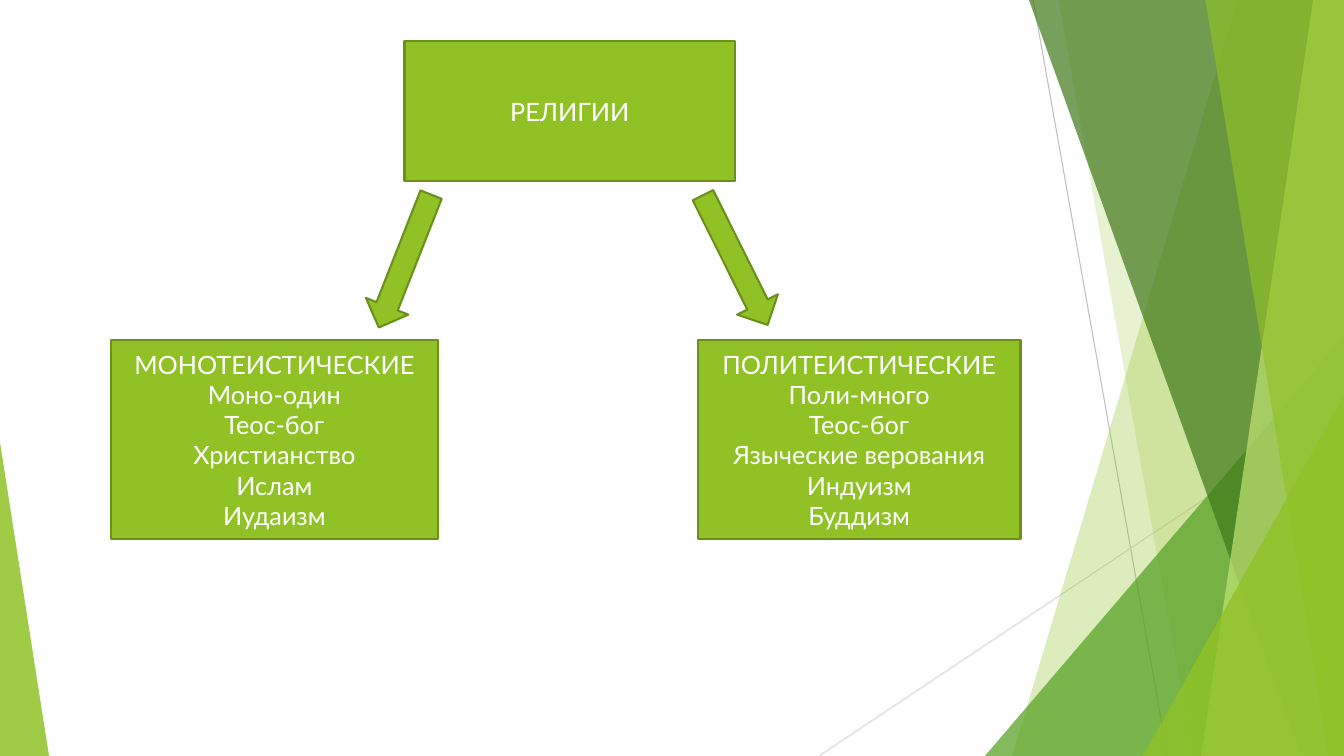
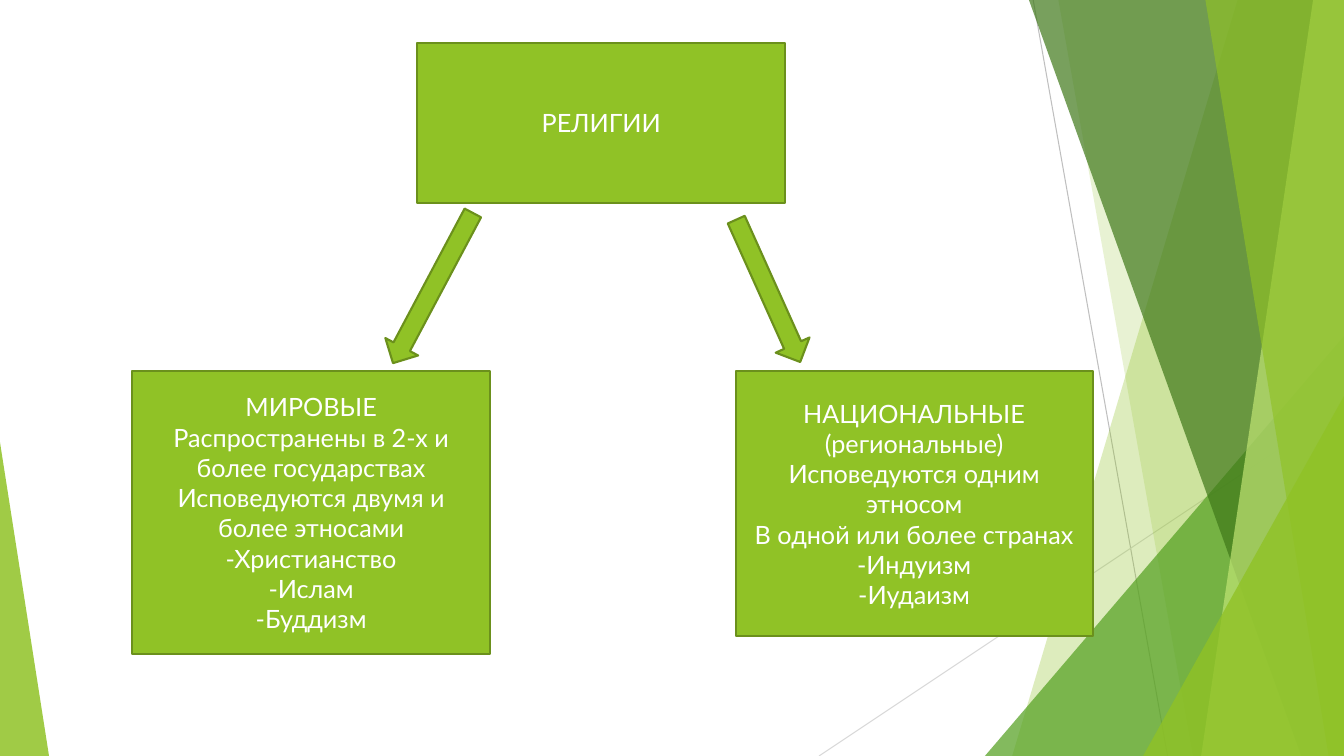
from dataclasses import dataclass

from pptx import Presentation
from pptx.dml.color import RGBColor
from pptx.enum.shapes import MSO_CONNECTOR as Connector, MSO_SHAPE as Shape
from pptx.enum.text import MSO_ANCHOR as Anchor, PP_ALIGN as Align
from pptx.oxml.ns import qn
from pptx.util import Pt
from lxml.etree import SubElement


@dataclass(frozen=True)
class Theme:
    lime: str = "90C226"
    outline: str = "6B901C"
    leaf: str = "54A021"
    forest: str = "3F7819"
    pale: str = "C0E474"
    white: str = "FFFFFF"
    ray_dark: str = "BFBFBF"
    ray_light: str = "D9D9D9"
    font: str = "Lato"
    text_size: float = 18
    border: float = 1.5
    hairline: float = 0.75


WIDTH, HEIGHT = 960, 540


class Deck:
    def __init__(self, theme):
        self.theme = theme
        self.prs = Presentation()
        self.prs.slide_width, self.prs.slide_height = Pt(WIDTH), Pt(HEIGHT)
        self.slide = None

    def new_slide(self):
        self.slide = self.prs.slides.add_slide(self.prs.slide_layouts[6])
        self.backdrop()

    # Basic elements
    def paint(self, shape, color, opacity=100, outline=None):
        shape.shadow.inherit = False
        shape.fill.solid()
        shape.fill.fore_color.rgb = RGBColor.from_string(color)
        if opacity < 100:
            tint = shape.fill._xPr.find(qn("a:solidFill"))[0]
            SubElement(tint, qn("a:alpha"), val=str(opacity * 1000))
        if outline:
            shape.line.color.rgb = RGBColor.from_string(outline)
            shape.line.width = Pt(self.theme.border)
        else:
            shape.line.fill.background()

    def add(self, kind, frame):
        return self.slide.shapes.add_shape(kind, *map(Pt, frame))

    def ray(self, start, end, color):
        ray = self.slide.shapes.add_connector(
            Connector.STRAIGHT, *map(Pt, start + end))
        ray.line.color.rgb = RGBColor.from_string(color)
        ray.line.width = Pt(self.theme.hairline)
        SubElement(ray._element.spPr, qn("a:effectLst"))

    def band(self, top_x, bottom_x, color, opacity):
        """Band from a slanted left edge to the right side of the slide."""
        outline = self.slide.shapes.build_freeform(Pt(top_x), 0)
        corners = [(WIDTH, 0), (WIDTH, HEIGHT), (bottom_x, HEIGHT)]
        outline.add_line_segments([(Pt(x), Pt(y)) for x, y in corners])
        self.paint(outline.convert_to_shape(), color, opacity)

    def wedge(self, left, top, width, apex, color, opacity):
        """Triangle standing on the bottom edge of the slide."""
        wedge = self.add(Shape.ISOSCELES_TRIANGLE,
                         (left, top, width, HEIGHT - top))
        wedge.adjustments[0] = apex
        self.paint(wedge, color, opacity)

    # Decoration shared by all slides
    def backdrop(self):
        t = self.theme
        self.ray((738, 0), (834, HEIGHT), t.ray_dark)
        self.ray((WIDTH, 290), (585, HEIGHT), t.ray_light)
        self.band(884, 723, t.lime, 30)
        self.band(756, 852, t.lime, 20)
        self.wedge(703.5, 240, 256.5, 1, t.leaf, 72)
        self.band(735, 929.5, t.forest, 70)
        self.band(938, 858, t.pale, 70)
        self.band(861, 949, t.lime, 65)
        self.wedge(816.5, 283, 143.5, 1, t.lime, 80)
        self.wedge(0, 316, 35, 0, t.lime, 85)

    # Diagram elements
    def box(self, frame, lines):
        t = self.theme
        box = self.add(Shape.RECTANGLE, frame)
        self.paint(box, t.lime, outline=t.outline)
        text = box.text_frame
        for name, value in {"word_wrap": True,
                            "vertical_anchor": Anchor.MIDDLE,
                            "text": "\n".join(lines)}.items():
            setattr(text, name, value)
        for paragraph in text.paragraphs:
            paragraph.alignment = Align.CENTER
            for run in paragraph.runs:
                for name, value in {"name": t.font,
                                    "size": Pt(t.text_size)}.items():
                    setattr(run.font, name, value)
                run.font.color.rgb = RGBColor.from_string(t.white)

    def arrow(self, frame, angle):
        arrow = self.add(Shape.DOWN_ARROW, frame)
        arrow.rotation = angle
        self.paint(arrow, self.theme.lime, outline=self.theme.outline)

    def classification(self, boxes, arrows):
        self.new_slide()
        for frame, lines in boxes:
            self.box(frame, lines)
        for frame, angle in arrows:
            self.arrow(frame, angle)


def main():
    deck = Deck(Theme())

    # By number of gods
    deck.classification(
        boxes=[
            ((289, 29.5, 236, 100), ["РЕЛИГИИ"]),
            ((79, 243, 234, 142),
             ["МОНОТЕИСТИЧЕСКИЕ", "Моно-один", "Теос-бог",
              "Христианство", "Ислам", "Иудаизм"]),
            ((498.5, 243, 230.5, 142),
             ["ПОЛИТЕИСТИЧЕСКИЕ", "Поли-много", "Теос-бог",
              "Языческие верования", "Индуизм", "Буддизм"]),
        ],
        arrows=[((273, 135.5, 32.5, 102), 21.5),
                ((509, 134, 32.5, 103.5), 333.5)])

    # By spread
    deck.classification(
        boxes=[
            ((298, 30.5, 263, 114.5), ["РЕЛИГИИ"]),
            ((94.5, 265, 255.5, 202.5),
             ["МИРОВЫЕ", "Распространены в 2-х и более государствах",
              "Исповедуются двумя и более этносами",
              "-Христианство", "-Ислам", "-Буддизм"]),
            ((525.5, 265, 255, 189.5),
             ["НАЦИОНАЛЬНЫЕ (региональные)", "Исповедуются одним этносом",
              "В одной или более странах", "-Индуизм", "-Иудаизм"]),
        ],
        arrows=[((296, 145, 26.5, 121.5), 28),
                ((535.5, 152, 26.5, 111.5), 335.8)])

    deck.prs.save("out.pptx")


if __name__ == "__main__":
    main()
